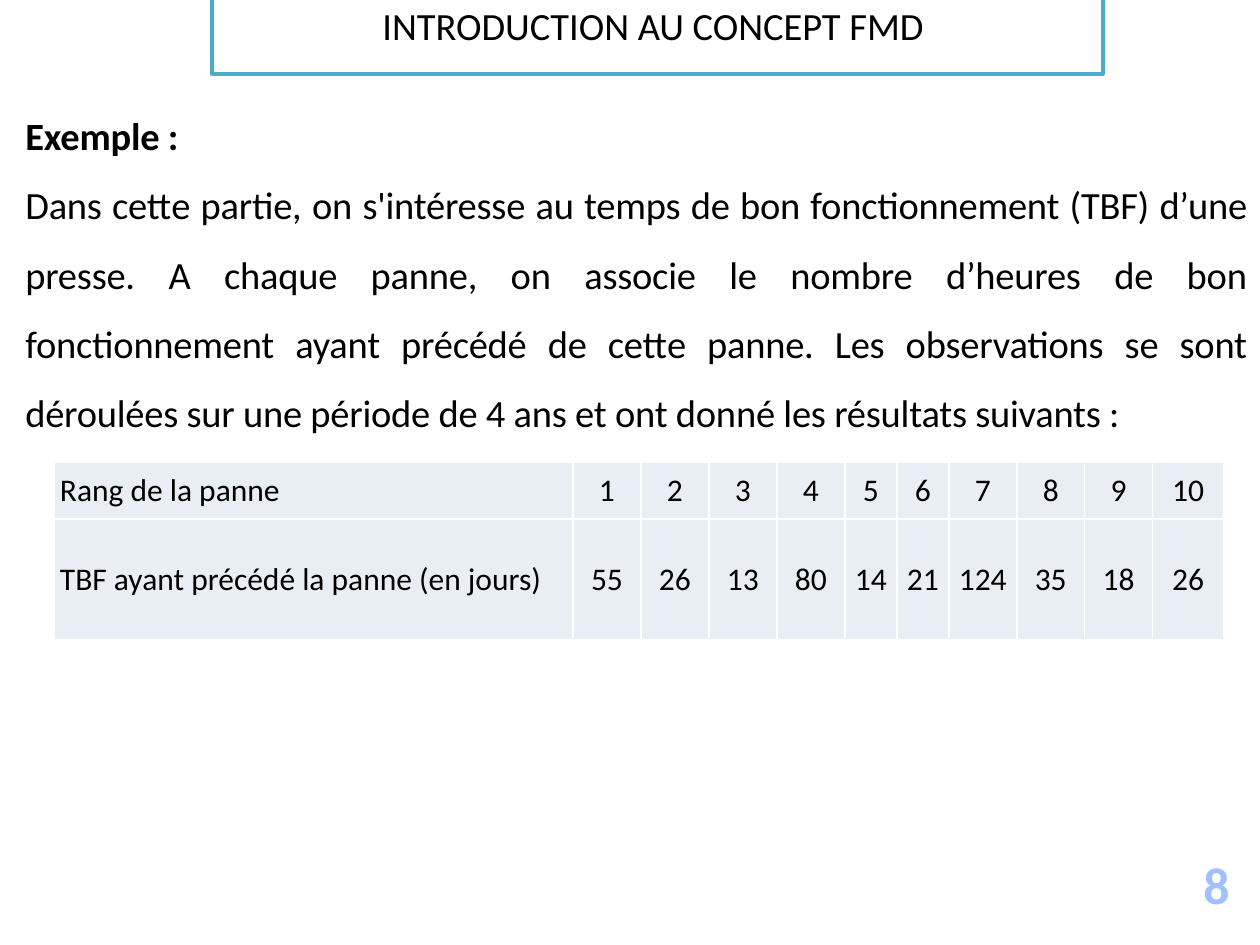
from lxml.etree import SubElement
from pptx import Presentation
from pptx.dml.color import RGBColor
from pptx.enum.shapes import MSO_SHAPE
from pptx.enum.text import MSO_ANCHOR, PP_ALIGN
from pptx.oxml.ns import qn
from pptx.util import Pt

SCALE = 914400 / 126
COLORS = {"text": "000000", "paper": "FFFFFF", "frame": "4BACC6",
          "cell": "E9EDF4", "number": "A0C1FF"}
COLUMNS = [519] + [68] * 4 + [52] * 2 + [68] * 3 + [71]
ROWS = [57, 121]
FAILURES = [
    ["Rang de la panne", *range(1, 11)],
    ["TBF ayant précédé la panne (en jours)", 55, 26, 13, 80, 14, 21, 124, 35, 18, 26],
]
EXAMPLE = [
    "Exemple :",
    "Dans cette partie, on s'intéresse au temps de bon fonctionnement (TBF) d’une presse. "
    "A chaque panne, on associe le nombre d’heures de bon fonctionnement ayant précédé de "
    "cette panne. Les observations se sont déroulées sur une période de 4 ans et ont donné "
    "les résultats suivants : ",
]


def emu(*lengths):
    return [round(length * SCALE) for length in lengths]


def color(name):
    return RGBColor.from_string(COLORS[name])


class SlideBuilder:
    """Holds the shared text style and the page being filled."""

    def __init__(self, page, font="Calibri"):
        self.page = page
        self.font = font

    def style(self, para, size, align=PP_ALIGN.LEFT, ink="text", bold=False, before=0):
        para.alignment = align
        para.space_before = Pt(before)
        for span in para.runs:
            span.font.name = self.font
            span.font.size = Pt(size)
            span.font.bold = bold
            span.font.color.rgb = color(ink)

    def title(self, text, place):
        box = self.page.shapes.add_shape(MSO_SHAPE.RECTANGLE, *emu(*place))
        box.shadow.inherit = False
        box.fill.solid()
        box.fill.fore_color.rgb = color("paper")
        box.line.color.rgb = color("frame")
        box.line.width = Pt(2)
        frame = box.text_frame
        frame.text = text
        frame.vertical_anchor = MSO_ANCHOR.TOP
        self.style(frame.paragraphs[0], 22, PP_ALIGN.CENTER, before=4)

    def number(self, text, place):
        frame = self.page.shapes.add_textbox(*emu(*place)).text_frame
        frame.word_wrap = True
        frame.text = text
        self.style(frame.paragraphs[0], 29.6, ink="number", bold=True, before=6)

    def body(self, lines, place):
        frame = self.page.shapes.add_textbox(*emu(*place)).text_frame
        frame.word_wrap = True
        frame.text = "\n".join(lines)
        for index, para in enumerate(frame.paragraphs):
            para.line_spacing = 1.5
            self.style(para, 22, PP_ALIGN.JUSTIFY, bold=index == 0)
            for span in para.runs:
                span.font._element.set("spc", "-10")

    def borders(self, cell):
        properties = cell._tc.get_or_add_tcPr()
        for position, side in enumerate(("lnL", "lnR", "lnT", "lnB")):
            line = SubElement(properties, qn(f"a:{side}"), w=str(Pt(1)))
            fill = SubElement(line, qn("a:solidFill"))
            SubElement(fill, qn("a:srgbClr"), val=COLORS["paper"])
            properties.insert(position, line)

    def table(self, rows, left, top):
        place = emu(left, top, sum(COLUMNS), sum(ROWS))
        table = self.page.shapes.add_table(len(ROWS), len(COLUMNS), *place).table
        table.first_row = table.horz_banding = False
        for column, width in zip(table.columns, emu(*COLUMNS)):
            column.width = width
        for row, height, values in zip(table.rows, emu(*ROWS), rows):
            row.height = height
            for index, (cell, value) in enumerate(zip(row.cells, values)):
                cell.text = str(value)
                cell.vertical_anchor = MSO_ANCHOR.MIDDLE
                cell.margin_left, cell.margin_right = emu(6, 6)
                cell.margin_top = cell.margin_bottom = 0
                cell.fill.solid()
                cell.fill.fore_color.rgb = color("cell")
                self.borders(cell)
                align = PP_ALIGN.CENTER if index else PP_ALIGN.LEFT
                self.style(cell.text_frame.paragraphs[0], 18, align)


def main():
    deck = Presentation()
    deck.slide_width, deck.slide_height = emu(1260, 945)
    builder = SlideBuilder(deck.slides.add_slide(deck.slide_layouts[6]))
    builder.number("8", (1191, 847, 69, 69))
    builder.body(EXAMPLE, (13, 83, 1247, 706))
    builder.table(FAILURES, 54, 462)
    builder.title("INTRODUCTION AU CONCEPT FMD ", (212, -4, 891, 78))
    deck.save("out.pptx")


if __name__ == "__main__":
    main()
